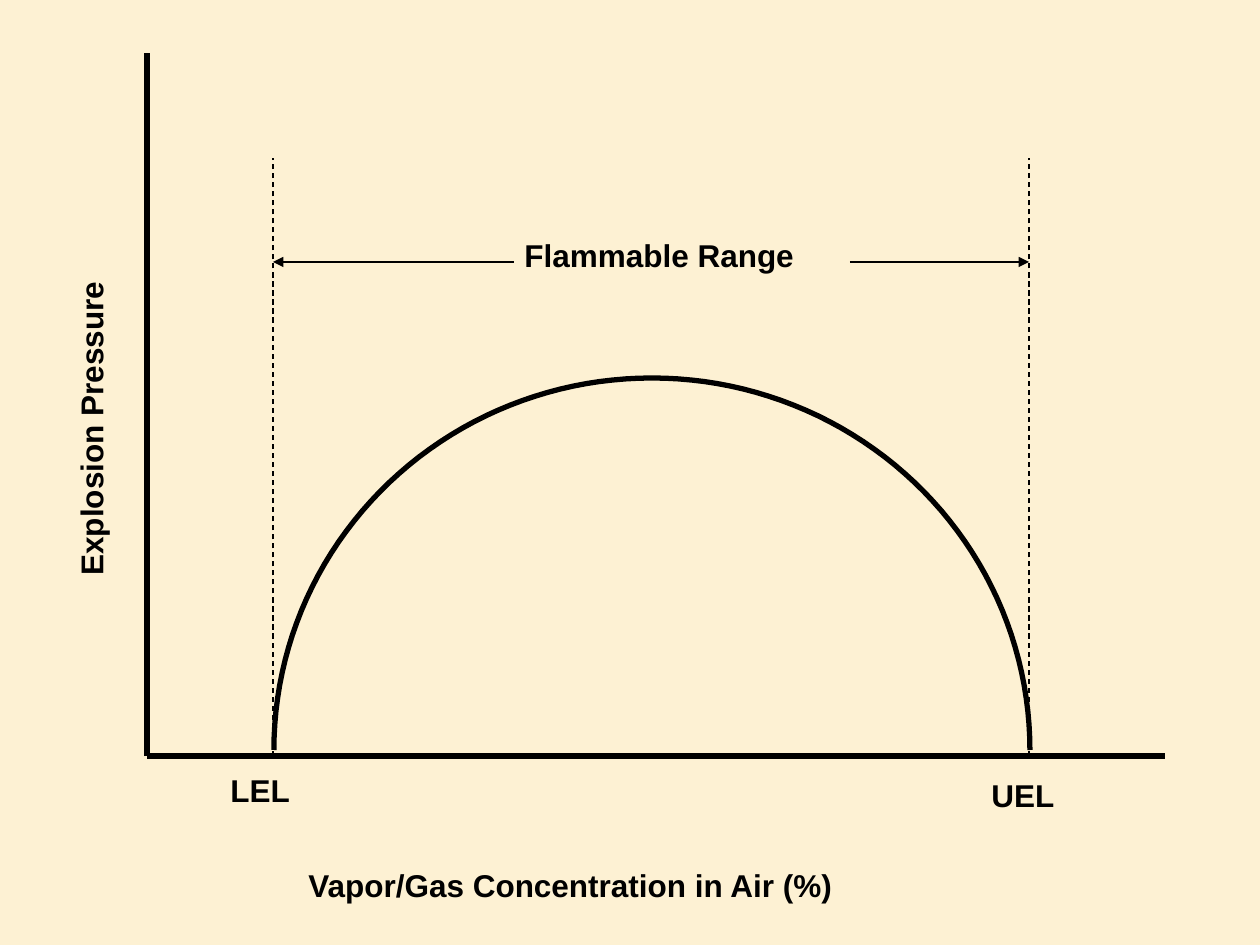
from math import cos, pi, sin

from lxml import etree
from pptx import Presentation
from pptx.dml.color import RGBColor
from pptx.enum.dml import MSO_LINE
from pptx.enum.shapes import MSO_CONNECTOR
from pptx.enum.text import MSO_ANCHOR, PP_ALIGN
from pptx.oxml.ns import qn
from pptx.util import Pt

STRAIGHT = MSO_CONNECTOR.STRAIGHT
DASH = MSO_LINE.DASH
TOP = MSO_ANCHOR.TOP
LEFT = PP_ALIGN.LEFT
EMU_PER_PX = 914400 / 126
BLANK_LAYOUT = 6


def px(length):
    return round(length * EMU_PER_PX)


def color(value):
    return RGBColor.from_string(value)


class Diagram:
    """Holds the style and the current page."""

    font = "Arial"
    size = 18
    ink = "000000"
    paper = "FDF1D3"
    thick = 3
    thin = 0.75

    def __init__(self, page):
        self.page = page
        fill = page.background.fill
        fill.solid()
        fill.fore_color.rgb = color(self.paper)

    def stroke(self, line, width):
        line.color.rgb = color(self.ink)
        line.width = Pt(width)

    def line(self, start, end, width, dash=None, arrow=False):
        connector = self.page.shapes.add_connector(
            STRAIGHT, *map(px, (*start, *end)))
        self.stroke(connector.line, width)
        if dash:
            connector.line.dash_style = dash
        properties = connector._element.spPr
        if arrow:
            outline = properties.find(qn("a:ln"))
            etree.SubElement(outline, qn("a:tailEnd"), type="triangle")
        etree.SubElement(properties, qn("a:effectLst"))

    def label(self, text, left, top, width, height=63, rotation=0):
        box = self.page.shapes.add_textbox(*map(px, (left, top, width, height)))
        box.rotation = rotation
        frame = box.text_frame
        frame.word_wrap = True
        frame.vertical_anchor = TOP
        frame.margin_top = px(10)
        frame.text = text
        para = frame.paragraphs[0]
        para.alignment = LEFT
        font = para.runs[0].font
        font.name = self.font
        font.size = Pt(self.size)
        font.bold = True
        font.color.rgb = color(self.ink)

    def half_ellipse(self, center_x, base, radius_x, radius_y, steps=90):
        angles = [pi - pi * step / steps for step in range(steps + 1)]
        points = [(px(center_x + radius_x * cos(angle)),
                   px(base - radius_y * sin(angle))) for angle in angles]
        builder = self.page.shapes.build_freeform(*points[0])
        builder.add_line_segments(points[1:], close=False)
        curve = builder.convert_to_shape()
        curve.shadow.inherit = False
        curve.fill.background()
        self.stroke(curve.line, self.thick)


def main():
    deck = Presentation()
    deck.slide_width, deck.slide_height = px(1260), px(945)
    page = deck.slides.add_slide(deck.slide_layouts[BLANK_LAYOUT])
    diagram = Diagram(page)

    # Axes
    origin_x, axis_y = 147, 756
    diagram.label("Explosion Pressure", -115, 348, 417, rotation=270)
    for end in ((origin_x, 53), (1165, axis_y)):
        diagram.line((origin_x, axis_y), end, diagram.thick)
    diagram.label("Vapor/Gas Concentration in Air (%)", 296, 856, 727)

    # Lower and upper explosive limits
    lower, upper = 273, 1029
    for limit in (lower, upper):
        diagram.line((limit, axis_y), (limit, 158), diagram.thin, dash=DASH)
    diagram.label("LEL", 218, 761, 105)
    diagram.label("UEL", 979, 766, 110)

    # Flammable range between the limits
    range_y = 262
    diagram.label("Flammable Range", 512, 226, 384)
    for start, limit in ((514, lower), (850, upper)):
        diagram.line((start, range_y), (limit, range_y), diagram.thin, arrow=True)

    # Pressure curve
    diagram.half_ellipse(652, 750, 378, 372)

    deck.save("out.pptx")


if __name__ == "__main__":
    main()
